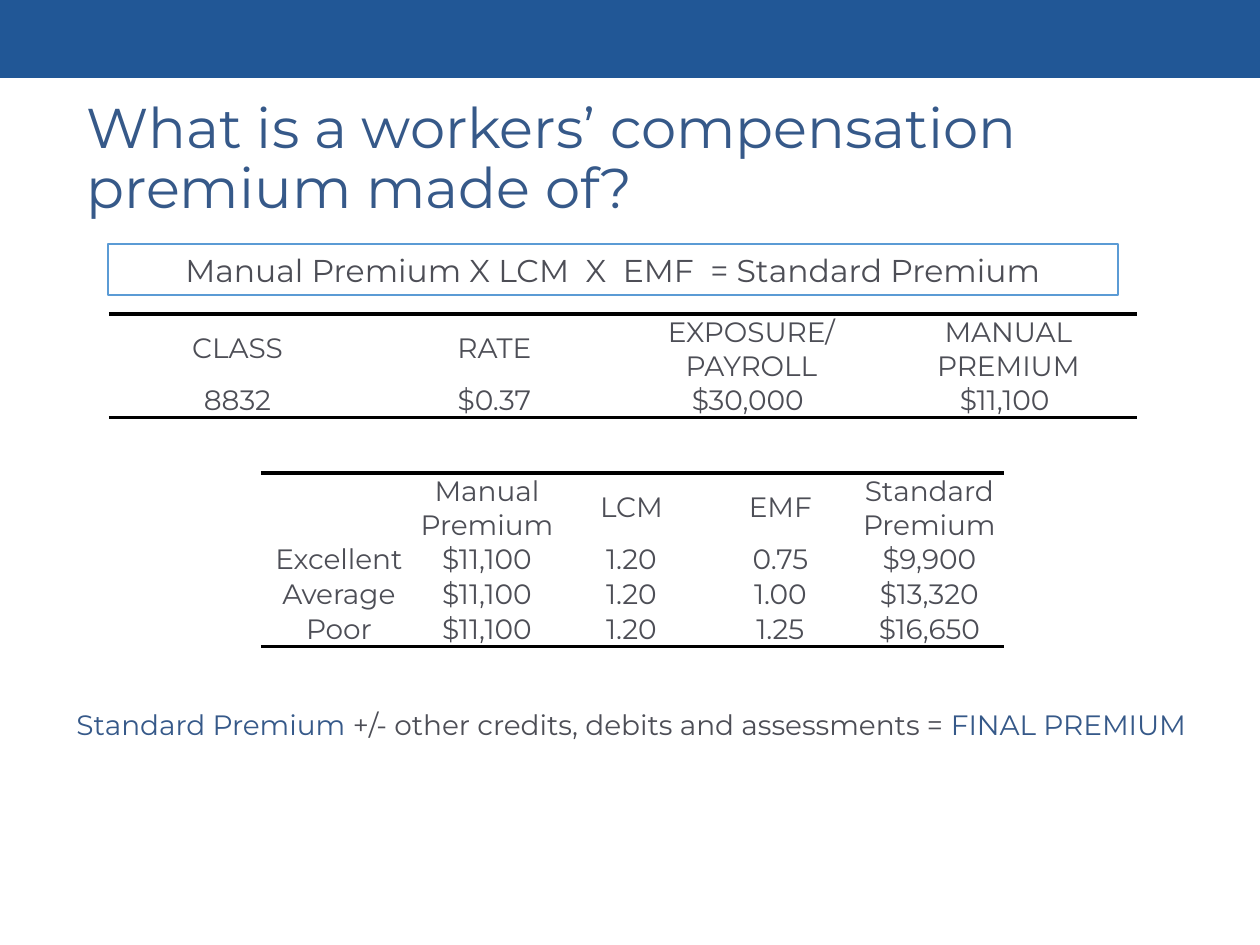
from lxml import etree
from pptx import Presentation
from pptx import util as u
from pptx.dml.color import RGBColor
from pptx.enum import shapes, text
from pptx.oxml import ns

BAND = RGBColor(0x00, 0x3F, 0x87)
BLUE = RGBColor(0x36, 0x59, 0x89)
EDGE = RGBColor(0x5B, 0x9B, 0xD5)
GREY = RGBColor(0x4D, 0x4E, 0x56)
WHITE = RGBColor(0xFF, 0xFF, 0xFF)
RULE = RGBColor(0x00, 0x00, 0x00)
PLAIN = "{2D5ABB26-0587-4C30-8999-92F81FD0307C}"  # table style without lines
MID, LOW = text.MSO_ANCHOR.MIDDLE, text.MSO_ANCHOR.BOTTOM


def px(n):
    return u.Emu(round(n * 914400 / 126))


class Deck:
    font = "Montserrat"

    def __init__(self, wide, high):
        self.file = Presentation()
        self.file.slide_width, self.file.slide_height = px(wide), px(high)
        self.slide = self.file.slides.add_slide(self.file.slide_layouts[6])

    def runs(self, para, parts, size, center=False):
        para.alignment = text.PP_ALIGN.CENTER if center else text.PP_ALIGN.LEFT
        for words, color in parts:
            run = para.add_run()
            run.text = words
            run.font.name, run.font.size = self.font, u.Pt(size)
            run.font.color.rgb = color

    def rect(self, x, y, w, h):
        box = self.slide.shapes.add_shape(
            shapes.MSO_SHAPE.RECTANGLE, px(x), px(y), px(w), px(h))
        box.shadow.inherit = False
        return box

    def band(self, x, y, w, h, color, alpha):
        box = self.rect(x, y, w, h)
        box.fill.solid()
        box.fill.fore_color.rgb = color
        box.line.fill.background()
        tone = box.element.spPr.find(".//" + ns.qn("a:srgbClr"))
        etree.SubElement(tone, ns.qn("a:alpha"), val=str(alpha * 1000))

    def frame(self, x, y, w, h, parts, size):
        box = self.rect(x, y, w, h)
        box.fill.background()
        box.line.color.rgb, box.line.width = EDGE, u.Pt(0.75)
        self.runs(box.text_frame.paragraphs[0], parts, size, center=True)

    def label(self, x, y, w, h, parts, size, space=None, anchor=None):
        body = self.slide.shapes.add_textbox(
            px(x), px(y), px(w), px(h)).text_frame
        body.word_wrap = True
        body.vertical_anchor = anchor
        para = body.paragraphs[0]
        para.line_spacing = space
        self.runs(para, parts, size)

    def rule(self, cell, side):
        props = cell._tc.get_or_add_tcPr()
        line = etree.SubElement(props, ns.qn("a:" + side), w=str(u.Pt(2)))
        fill = etree.SubElement(line, ns.qn("a:solidFill"))
        etree.SubElement(fill, ns.qn("a:srgbClr"), val=str(RULE))

    def table(self, x, y, cols, rows, data, size=16):
        grid = self.slide.shapes.add_table(
            len(rows), len(cols), px(x), px(y),
            px(sum(cols)), px(sum(rows))).table
        grid.first_row = grid.horz_banding = False
        grid._tbl.tblPr.find(ns.qn("a:tableStyleId")).text = PLAIN
        for col, w in zip(grid.columns, cols):
            col.width = px(w)
        for r, (h, line) in enumerate(zip(rows, data)):
            grid.rows[r].height = px(h)
            for c, words in enumerate(line):
                cell = grid.cell(r, c)
                cell.margin_left = cell.margin_right = cell.margin_top = px(1)
                cell.margin_bottom = 0
                cell.vertical_anchor = LOW if r else MID
                # Rules only above the first row and below the last
                if r == 0:
                    self.rule(cell, "lnT")
                if r == len(rows) - 1:
                    self.rule(cell, "lnB")
                cell.fill.solid()
                cell.fill.fore_color.rgb = WHITE
                body = cell.text_frame
                for i, part in enumerate(words.split("\n") if words else []):
                    para = body.add_paragraph() if i else body.paragraphs[0]
                    self.runs(para, [(part, GREY)], size, center=True)


def main():
    deck = Deck(1260, 945)

    # Top band and title
    deck.band(0, 0, 1260, 78, BAND, 87)
    deck.label(74, 98, 1131, 125,
               [("What is a workers’ compensation premium made of?", BLUE)],
               32, space=0.9, anchor=MID)

    # Formula
    deck.frame(108, 244, 1010, 51,
               [("Manual Premium X LCM  X  EMF  = Standard Premium", GREY)], 18)

    # Manual premium
    deck.table(109, 314, [257] * 4, [68, 35], [
        ["CLASS", "RATE", "EXPOSURE/\nPAYROLL", "MANUAL PREMIUM"],
        ["8832", "$0.37", "$30,000 ", "$11,100 "],
    ])

    # Standard premium by rating
    deck.table(261, 473, [156, 140] + [149] * 3, [68] + [35] * 3, [
        ["", "Manual Premium", "LCM", "EMF", "Standard Premium"],
        ["Excellent", "$11,100", "1.20", "0.75", "$9,900"],
        ["Average", "$11,100", "1.20", "1.00", "$13,320"],
        ["Poor", "$11,100", "1.20", "1.25", "$16,650"],
    ])

    # Final premium
    deck.label(64, 701, 1150, 47, [
        ("Standard Premium ", BLUE),
        ("+/- other credits, debits and assessments = ", GREY),
        ("FINAL PREMIUM", BLUE),
    ], 16)

    deck.file.save("out.pptx")


if __name__ == "__main__":
    main()
